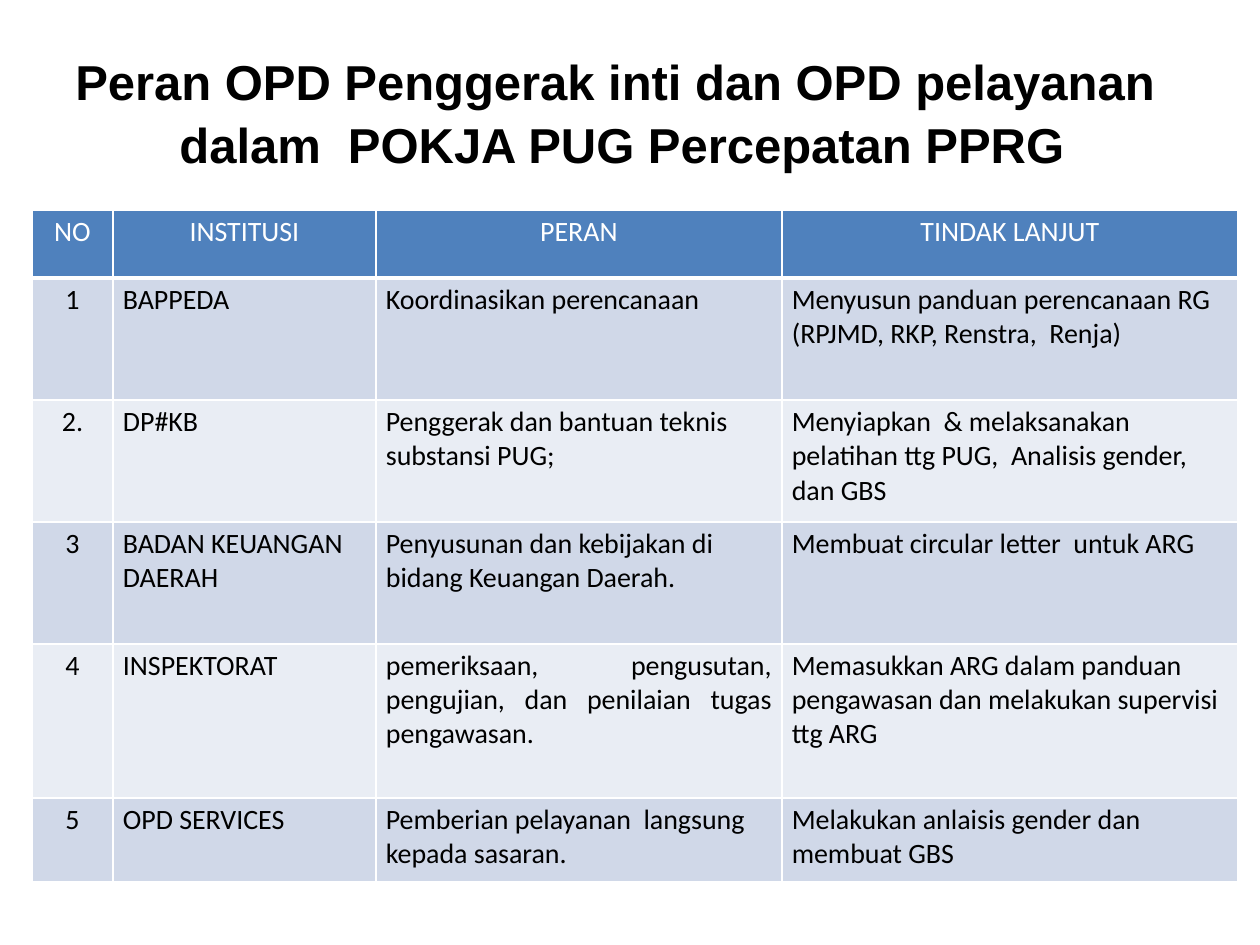
from dataclasses import dataclass

from lxml.etree import SubElement
from pptx import Presentation
from pptx.dml.color import RGBColor
from pptx.enum.text import MSO_ANCHOR, MSO_AUTO_SIZE, PP_ALIGN
from pptx.oxml.ns import qn
from pptx.util import Emu, Pt


@dataclass(frozen=True)
class Theme:
    head: str = "4F81BD"
    bands: tuple = ("D0D8E8", "E9EDF4")
    light: str = "FFFFFF"
    dark: str = "000000"
    title: int = 28
    body: int = 16
    title_font: str = "Arial"
    body_font: str = "Calibri"


@dataclass(frozen=True)
class Row:
    no: str
    body: str
    role: str
    action: str
    high: int
    align: PP_ALIGN = PP_ALIGN.LEFT


THEME = Theme()
WIDTHS = (81, 263, 406, 456)
HEAD = Row("NO", "INSTITUSI", "PERAN", "TINDAK LANJUT", 68, PP_ALIGN.CENTER)
ROWS = (
    Row("1", "BAPPEDA", "Koordinasikan perencanaan",
        "Menyusun panduan perencanaan RG (RPJMD, RKP, Renstra,  Renja)", 122),
    Row("2.", "DP#KB", "Penggerak dan bantuan teknis substansi PUG;",
        "Menyiapkan  & melaksanakan pelatihan ttg PUG,  Analisis gender,  dan GBS", 122),
    Row("3", "BADAN KEUANGAN DAERAH",
        "Penyusunan dan kebijakan di bidang Keuangan Daerah.",
        "Membuat circular letter  untuk ARG", 122),
    Row("4", "INSPEKTORAT",
        "pemeriksaan, pengusutan, pengujian, dan penilaian tugas pengawasan.",
        "Memasukkan ARG dalam panduan pengawasan dan melakukan supervisi ttg ARG",
        154, PP_ALIGN.JUSTIFY),
    Row("5", "OPD SERVICES", "Pemberian pelayanan  langsung kepada sasaran.",
        "Melakukan anlaisis gender dan membuat GBS", 84),
)


def px(count: int) -> Emu:
    return Emu(round(count * 914400 / 126))


def write(frame, *lines: str, size: int = THEME.body, font: str = THEME.body_font,
          color: str = THEME.dark, bold: bool = False,
          align: PP_ALIGN = PP_ALIGN.LEFT, space: float = 1.0) -> None:
    frame.word_wrap = True
    for i, line in enumerate(lines):
        para = frame.add_paragraph() if i else frame.paragraphs[0]
        para.alignment = align
        para.line_spacing = space
        para.space_before = para.space_after = Pt(0)
        run = para.add_run()
        run.text = line
        run.font.size = Pt(size)
        run.font.name = font
        run.font.bold = bold
        run.font.color.rgb = RGBColor.from_string(color)


def edge(cell, side: str, width: int) -> None:
    line = SubElement(cell._tc.get_or_add_tcPr(), qn(f"a:ln{side}"), w=str(Pt(width)))
    SubElement(SubElement(line, qn("a:solidFill")), qn("a:srgbClr"), val=THEME.light)


def inset(item) -> None:
    item.margin_left = item.margin_right = px(10)
    item.margin_top = item.margin_bottom = px(5)


def draw_title(slide) -> None:
    title = slide.shapes.title
    title.left, title.top, title.width, title.height = map(px, (0, 42, 1230, 130))
    frame = title.text_frame
    inset(frame)
    frame.auto_size = MSO_AUTO_SIZE.NONE
    frame.vertical_anchor = MSO_ANCHOR.TOP
    write(frame, "Peran OPD Penggerak inti dan OPD pelayanan",
          " dalam  POKJA PUG Percepatan PPRG", size=THEME.title,
          font=THEME.title_font, bold=True, align=PP_ALIGN.CENTER, space=1.07)


def draw_row(table, at: int, row: Row) -> None:
    table.rows[at].height = px(row.high)
    fill = THEME.bands[(at - 1) % 2] if at else THEME.head
    color = THEME.dark if at else THEME.light
    side = PP_ALIGN.LEFT if at else PP_ALIGN.CENTER
    aligns = (PP_ALIGN.CENTER, side, row.align, side)
    texts = (row.no, row.body, row.role, row.action)
    for cell, text, align in zip(table.rows[at].cells, texts, aligns):
        inset(cell)
        for name, width in zip("LRTB", (1, 1, 3 if at == 1 else 1, 1 if at else 3)):
            edge(cell, name, width)
        cell.fill.solid()
        cell.fill.fore_color.rgb = RGBColor.from_string(fill)
        write(cell.text_frame, text, color=color, align=align)


def draw_table(slide) -> None:
    rows = (HEAD, *ROWS)
    size = (sum(WIDTHS), sum(row.high for row in rows))
    table = slide.shapes.add_table(len(rows), len(WIDTHS),
                                   *map(px, (32, 210, *size))).table
    for column, width in zip(table.columns, WIDTHS):
        column.width = px(width)
    for at, row in enumerate(rows):
        draw_row(table, at, row)


def main() -> None:
    deck = Presentation()
    deck.slide_width, deck.slide_height = px(1260), px(945)
    slide = deck.slides.add_slide(deck.slide_layouts[5])
    draw_title(slide)
    draw_table(slide)
    deck.save("out.pptx")


if __name__ == "__main__":
    main()
